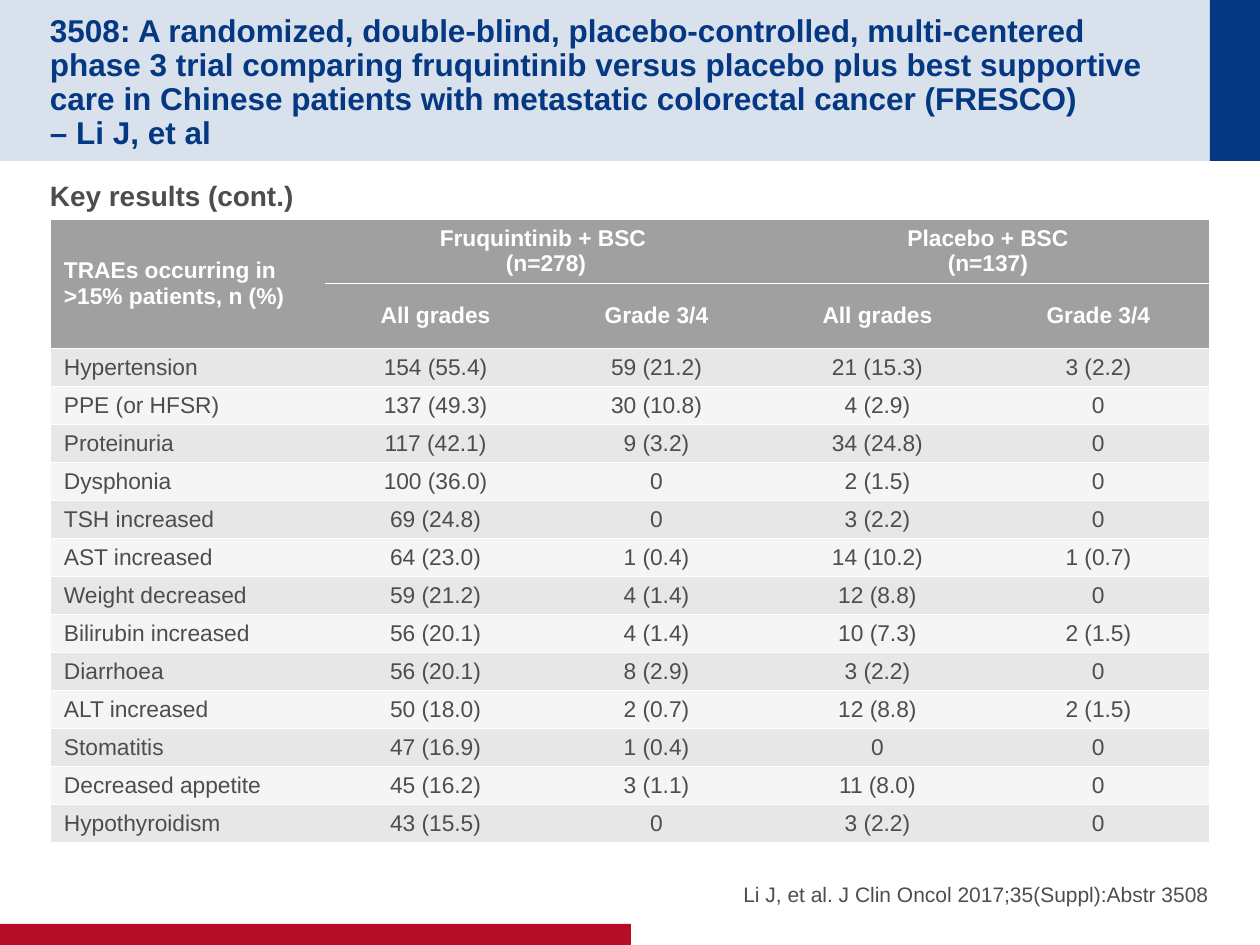
import pptx
import pptx.util
import pptx.dml.color
import pptx.enum.shapes
import pptx.enum.text
import pptx.oxml
import pptx.oxml.ns

RGBColor = pptx.dml.color.RGBColor
PP_ALIGN = pptx.enum.text.PP_ALIGN
MSO_ANCHOR = pptx.enum.text.MSO_ANCHOR

PX = 914400 // 126
FONT = "Arial"
NAVY = RGBColor(0x04, 0x38, 0x82)
PALE_BLUE = RGBColor(0xD9, 0xE1, 0xEC)
RED = RGBColor(0xB6, 0x0D, 0x27)
TEXT_GREY = RGBColor(0x4D, 0x4D, 0x4D)
HEAD_GREY = RGBColor(0xA0, 0xA0, 0xA0)
ROW_DARK = RGBColor(0xE7, 0xE7, 0xE7)
ROW_LIGHT = RGBColor(0xF5, 0xF5, 0xF5)
WHITE = RGBColor(0xFF, 0xFF, 0xFF)

TITLE = (
    "3508: A randomized, double-blind, placebo-controlled, multi-centered "
    "phase 3 trial comparing fruquintinib versus placebo plus best supportive "
    "care in Chinese patients with metastatic colorectal cancer (FRESCO) "
    "\v– Li J, et al"
)
HEADER = [
    ["TRAEs occurring in >15% patients, n (%)",
     "Fruquintinib + BSC \v(n=278)", "", "Placebo + BSC\v(n=137)", ""],
    ["", "All grades", "Grade 3/4", "All grades", "Grade 3/4"],
]
MERGES = [((0, 0), (1, 0)), ((0, 1), (0, 2)), ((0, 3), (0, 4))]
EVENTS = [
    ["Hypertension", "154 (55.4)", "59 (21.2)", "21 (15.3)", "3 (2.2)"],
    ["PPE (or HFSR)", "137 (49.3)", "30 (10.8)", "4 (2.9)", "0"],
    ["Proteinuria", "117 (42.1)", "9 (3.2)", "34 (24.8)", "0"],
    ["Dysphonia", "100 (36.0)", "0", "2 (1.5)", "0"],
    ["TSH increased", "69 (24.8)", "0", "3 (2.2)", "0"],
    ["AST increased", "64 (23.0)", "1 (0.4)", "14 (10.2)", "1 (0.7)"],
    ["Weight decreased", "59 (21.2)", "4 (1.4)", "12 (8.8)", "0"],
    ["Bilirubin increased", "56 (20.1)", "4 (1.4)", "10 (7.3)", "2 (1.5)"],
    ["Diarrhoea", "56 (20.1)", "8 (2.9)", "3 (2.2)", "0"],
    ["ALT increased", "50 (18.0)", "2 (0.7)", "12 (8.8)", "2 (1.5)"],
    ["Stomatitis", "47 (16.9)", "1 (0.4)", "0", "0"],
    ["Decreased appetite", "45 (16.2)", "3 (1.1)", "11 (8.0)", "0"],
    ["Hypothyroidism", "43 (15.5)", "0", "3 (2.2)", "0"],
]
COL_WIDTHS = [274] + [221] * 4
ROW_HEIGHTS = [63] * len(HEADER) + [38] * len(EVENTS)


def px(*values):
    return [v * PX for v in values]


def format_text(tf, size, color, bold, align):
    for p in tf.paragraphs:
        p.alignment = align
        for r in p.runs:
            r.font.name = FONT
            r.font.size = pptx.util.Pt(size)
            r.font.bold = bold
            r.font.color.rgb = color


def add_bar(s, box, color):
    sp = s.shapes.add_shape(pptx.enum.shapes.MSO_SHAPE.RECTANGLE, *px(*box))
    sp.shadow.inherit = False
    sp.fill.solid()
    sp.fill.fore_color.rgb = color
    sp.line.fill.background()


def add_text(s, box, text, size, color, bold=False, align=PP_ALIGN.LEFT,
             anchor=MSO_ANCHOR.TOP, top=0):
    tf = s.shapes.add_textbox(*px(*box)).text_frame
    tf.word_wrap = True
    tf.margin_left = tf.margin_right = tf.margin_bottom = 0
    tf.margin_top = top * PX
    tf.vertical_anchor = anchor
    tf.text = text
    format_text(tf, size, color, bold, align)
    return tf


def set_borders(cell):
    white_line = f'<a:solidFill><a:srgbClr val="{WHITE}"/></a:solidFill>'
    sides = {"L": "<a:noFill/>", "R": "<a:noFill/>", "T": white_line, "B": white_line}
    tc_pr = cell._tc.get_or_add_tcPr()
    for i, (side, paint) in enumerate(sides.items()):
        xml = f'<a:ln{side} {pptx.oxml.ns.nsdecls("a")} w="12700">{paint}</a:ln{side}>'
        tc_pr.insert(i, pptx.oxml.parse_xml(xml))


def fill_cell(cell, text, fill, color, bold, align):
    cell.margin_left = cell.margin_right = 13 * PX
    cell.margin_top = cell.margin_bottom = 5 * PX
    cell.vertical_anchor = MSO_ANCHOR.MIDDLE
    cell.fill.solid()
    cell.fill.fore_color.rgb = fill
    cell.text_frame.text = text
    format_text(cell.text_frame, 13, color, bold, align)
    set_borders(cell)


def add_events_table(s, left, top):
    rows = HEADER + EVENTS
    size = (sum(COL_WIDTHS), sum(ROW_HEIGHTS))
    table = s.shapes.add_table(
        len(rows), len(COL_WIDTHS), *px(left, top, *size)).table
    table.first_row = table.horz_banding = False
    for column, width in zip(table.columns, COL_WIDTHS):
        column.width = width * PX
    for row, height in zip(table.rows, ROW_HEIGHTS):
        row.height = height * PX
    for first, last in MERGES:
        table.cell(*first).merge(table.cell(*last))
    for i, row in enumerate(rows):
        head = i < len(HEADER)
        fill = HEAD_GREY if head else (ROW_DARK, ROW_LIGHT)[i % 2]
        color = WHITE if head else TEXT_GREY
        for j, text in enumerate(row):
            cell = table.cell(i, j)
            if not cell.is_spanned:
                align = PP_ALIGN.CENTER if j else PP_ALIGN.LEFT
                fill_cell(cell, text, fill, color, head, align)


def main():
    prs = pptx.Presentation()
    prs.slide_width, prs.slide_height = px(1260, 945)
    s = prs.slides.add_slide(prs.slide_layouts[6])
    add_bar(s, (0, 0, 1260, 161), PALE_BLUE)
    add_bar(s, (1210, 0, 50, 161), NAVY)
    add_bar(s, (0, 924, 631, 21), RED)
    title = add_text(s, (50, 25, 1135, 111), TITLE, 18, NAVY, bold=True,
                     anchor=MSO_ANCHOR.MIDDLE, top=6)
    title.paragraphs[0].line_spacing = 0.9
    add_text(s, (620, 840, 589, 67), "Li J, et al. J Clin Oncol 2017;35(Suppl):Abstr 3508",
             12, TEXT_GREY, align=PP_ALIGN.RIGHT, anchor=MSO_ANCHOR.BOTTOM)
    add_text(s, (50, 173, 1159, 69), "Key results (cont.)", 16, TEXT_GREY,
             bold=True, top=6)
    add_events_table(s, 51, 219)
    prs.save("out.pptx")


if __name__ == "__main__":
    main()
